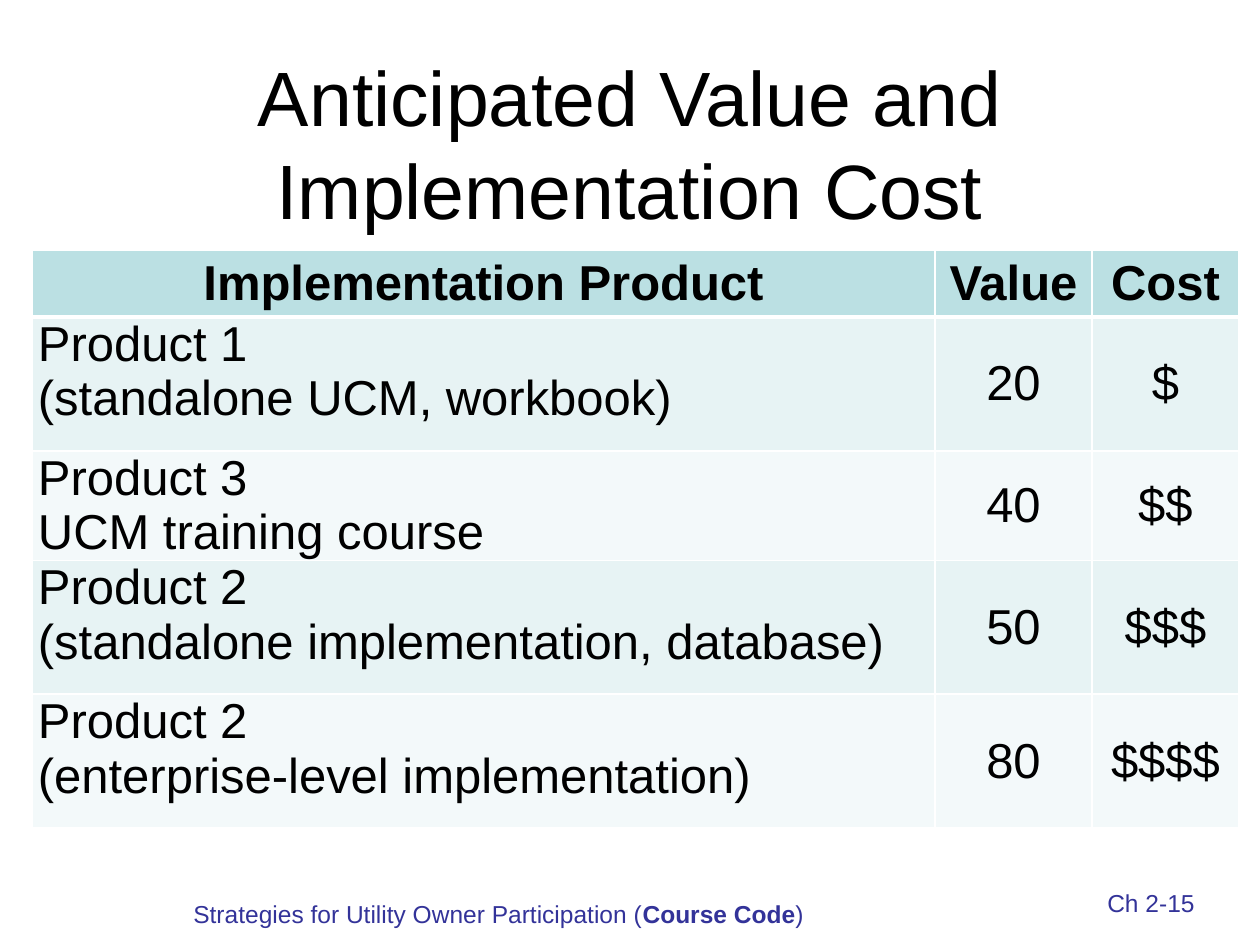
from dataclasses import dataclass
from lxml import etree
from pptx import Presentation
from pptx import util as u
from pptx.dml import color
from pptx.enum import text
from pptx.oxml import ns


@dataclass(frozen=True)
class Theme:
    font: str = "Arial"
    ink: str = "000000"
    note: str = "333399"
    border: str = "FFFFFF"
    header: str = "BBE0E3"
    bands: tuple = ("E7F3F4", "F3F9FA")
    title_size: int = 44
    table_size: int = 28
    note_size: int = 14


THEME = Theme()
HEADINGS = ("Implementation Product", "Value", "Cost")
PRODUCTS = (
    ("Product 1\v(standalone UCM, workbook)", "20", "$"),
    ("Product 3\nUCM training course", "40", "$$"),
    ("Product 2\v(standalone implementation, database)", "50", "$$$"),
    ("Product 2\v(enterprise-level implementation)", "80", "$$$$"),
)
COLUMN_WIDTHS = (903, 157, 147)
ROW_HEIGHTS = (67, 134, 109, 134, 134)


def px(length):
    return u.Emu(round(length * 914400 / 126))


def style(para, size, ink, align, bold=None):
    para.alignment = align
    para.font.name = THEME.font
    para.font.size = u.Pt(size)
    para.font.color.rgb = color.RGBColor.from_string(ink)
    para.font.bold = bold


def add_title(page, box, wording):
    title = page.shapes.title
    title.left, title.top, title.width, title.height = map(px, box)
    frame = title.text_frame
    frame.text = wording
    frame.word_wrap = True
    frame.auto_size = text.MSO_AUTO_SIZE.NONE
    frame.vertical_anchor = text.MSO_ANCHOR.TOP
    frame.margin_top = px(12)
    style(frame.paragraphs[0], THEME.title_size, THEME.ink, text.PP_ALIGN.CENTER)


def add_borders(cell, bottom_width):
    properties = cell._tc.get_or_add_tcPr()
    for side, width in (("L", 1), ("R", 1), ("T", 1), ("B", bottom_width)):
        line = etree.SubElement(properties, ns.qn(f"a:ln{side}"), w=str(u.Pt(width)))
        fill = etree.SubElement(line, ns.qn("a:solidFill"))
        etree.SubElement(fill, ns.qn("a:srgbClr"), val=THEME.border)


def fill_cell(cell, wording, row, column):
    is_header = row == 0
    is_product = column == 0 and not is_header
    cell.text = wording
    cell.margin_left = cell.margin_right = px(6)
    cell.margin_top = cell.margin_bottom = 0
    cell.vertical_anchor = text.MSO_ANCHOR.TOP if is_product else text.MSO_ANCHOR.MIDDLE
    add_borders(cell, 3 if is_header else 1)
    cell.fill.solid()
    shade = THEME.header if is_header else THEME.bands[(row - 1) % 2]
    cell.fill.fore_color.rgb = color.RGBColor.from_string(shade)
    align = text.PP_ALIGN.LEFT if is_product else text.PP_ALIGN.CENTER
    for para in cell.text_frame.paragraphs:
        style(para, THEME.table_size, THEME.ink, align, is_header)


def add_product_table(page, left, top):
    rows = (HEADINGS, *PRODUCTS)
    table = page.shapes.add_table(
        len(rows), len(HEADINGS), px(left), px(top),
        px(sum(COLUMN_WIDTHS)), px(sum(ROW_HEIGHTS)),
    ).table
    for column, width in zip(table.columns, COLUMN_WIDTHS):
        column.width = px(width)
    for row, height in zip(table.rows, ROW_HEIGHTS):
        row.height = px(height)
    for row, wordings in enumerate(rows):
        for column, wording in enumerate(wordings):
            fill_cell(table.cell(row, column), wording, row, column)


def add_note(page, box, spans, align):
    frame = page.shapes.add_textbox(*map(px, box)).text_frame
    frame.word_wrap = True
    para = frame.paragraphs[0]
    for wording, bold in spans:
        span = para.add_run()
        span.text = wording
        if bold:
            span.font.bold = True
    style(para, THEME.note_size, THEME.note, align)


def main():
    deck = Presentation()
    deck.slide_width, deck.slide_height = px(1260), px(945)
    page = deck.slides.add_slide(deck.slide_layouts[5])
    add_title(page, (63, 38, 1134, 157), "Anticipated Value and Implementation Cost")
    add_product_table(page, 32, 250)
    add_note(page, (1050, 882, 157, 32), [("Ch 2-15", False)], text.PP_ALIGN.RIGHT)
    course = [
        ("Strategies for Utility Owner Participation (", False),
        ("Course Code", True),
        (")", False),
    ]
    add_note(page, (181, 893, 746, 42), course, text.PP_ALIGN.LEFT)
    deck.save("out.pptx")


if __name__ == "__main__":
    main()
